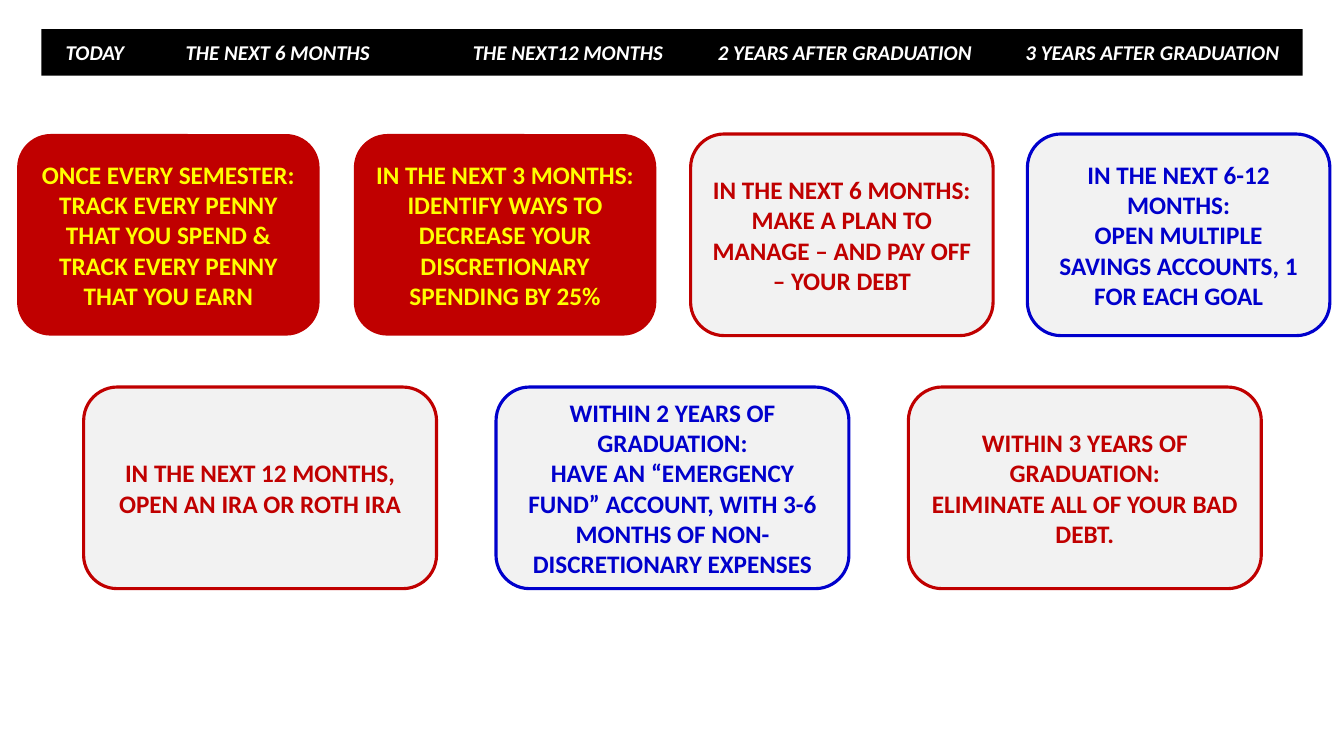
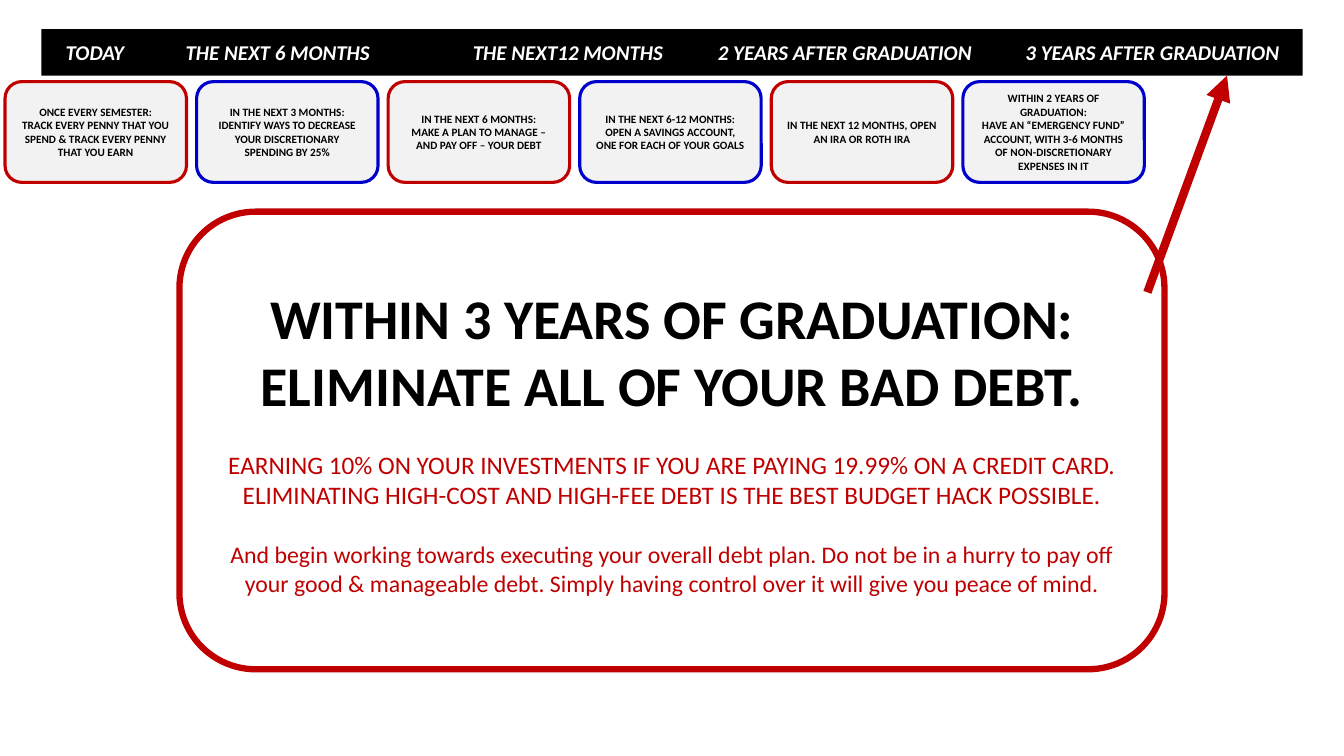
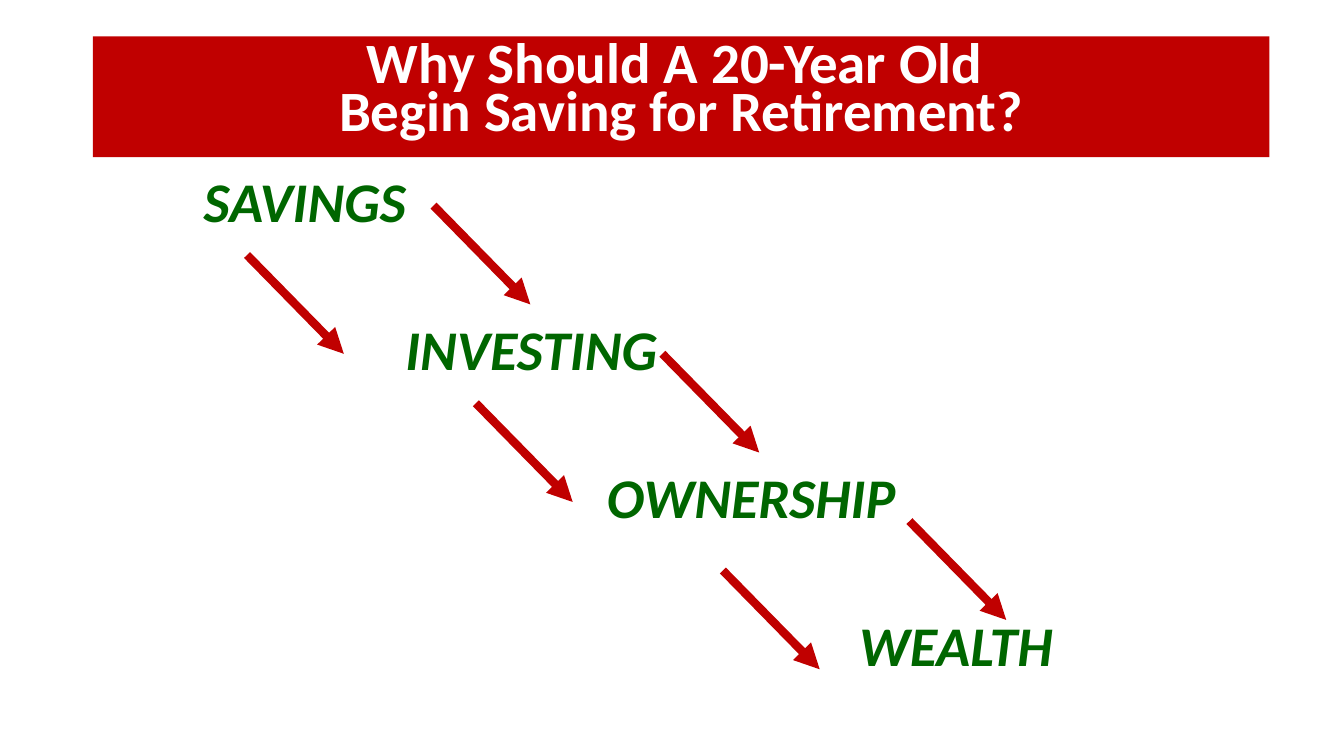
from lxml.etree import SubElement
from pptx import Presentation
from pptx.dml.color import RGBColor
from pptx.enum.shapes import MSO_CONNECTOR, MSO_SHAPE
from pptx.enum.text import MSO_ANCHOR, MSO_AUTO_SIZE, PP_ALIGN
from pptx.oxml.ns import qn
from pptx.util import Inches, Pt

RED = RGBColor(0xC0, 0x00, 0x00)
BLUE = RGBColor(0x00, 0x00, 0xCC)
GREEN = RGBColor(0x00, 0x66, 0x00)
YELLOW = RGBColor(0xFF, 0xFF, 0x00)
GRAY = RGBColor(0xF2, 0xF2, 0xF2)
BLACK = RGBColor(0x00, 0x00, 0x00)
WHITE = RGBColor(0xFF, 0xFF, 0xFF)
FONT = "Calibri"
TITLE_AND_CONTENT, TITLE_ONLY = 1, 5

PERIODS = ["TODAY", "THE NEXT 6 MONTHS", "THE NEXT12 MONTHS",
           "2 YEARS AFTER GRADUATION", "3 YEARS AFTER GRADUATION"]
PERIOD_TABS = [1.19, 4.04, 6.47, 9.52]

TRACK = ["ONCE EVERY SEMESTER:",
         "TRACK EVERY PENNY THAT YOU SPEND & TRACK EVERY PENNY THAT YOU EARN"]
DECREASE = ["IN THE NEXT 3 MONTHS:",
            "IDENTIFY WAYS TO DECREASE YOUR DISCRETIONARY SPENDING BY 25%"]
MANAGE = ["IN THE NEXT 6 MONTHS:",
          "MAKE A PLAN TO MANAGE – AND PAY OFF – YOUR DEBT"]
SAVE = "IN THE NEXT 6-12 MONTHS:"
IRA = ["IN THE NEXT 12 MONTHS, OPEN AN IRA OR ROTH IRA"]
FUND = ["WITHIN 2 YEARS OF GRADUATION:",
        "HAVE AN “EMERGENCY FUND” ACCOUNT, WITH 3-6 MONTHS OF "
        "NON-DISCRETIONARY EXPENSES"]
ELIMINATE = ["WITHIN 3 YEARS OF GRADUATION:", "ELIMINATE ALL OF YOUR BAD DEBT."]


class Deck:
    def __init__(self):
        self.prs = Presentation()
        self.prs.slide_width = Inches(13.33)
        self.prs.slide_height = Inches(7.5)

    def slide(self, layout):
        self.s = self.prs.slides.add_slide(self.prs.slide_layouts[layout])

    def para(self, tf, text, size, color, bold=True, italic=False,
             before=0, spacing=1.0, align=PP_ALIGN.CENTER):
        p = tf.add_paragraph() if tf.text else tf.paragraphs[0]
        p.alignment = align
        p.line_spacing = spacing
        p.space_before = Pt(before)
        for i, line in enumerate(text.split("\n")):
            if i:
                p.add_line_break()
            r = p.add_run()
            r.text = line
            r.font.name = FONT
            r.font.size = Pt(size)
            r.font.bold = bold
            r.font.italic = italic
            r.font.color.rgb = color
        return p

    def place(self, sp, left, top, width, height, anchor):
        sp.left, sp.top = Inches(left), Inches(top)
        sp.width, sp.height = Inches(width), Inches(height)
        tf = sp.text_frame
        tf.word_wrap = True
        tf.auto_size = MSO_AUTO_SIZE.NONE
        tf.vertical_anchor = anchor
        return tf

    def title(self, left, top, width, height, fill, anchor):
        sp = self.s.shapes.title
        sp.fill.solid()
        sp.fill.fore_color.rgb = fill
        return self.place(sp, left, top, width, height, anchor)

    def timeline(self):
        tf = self.title(0.41, 0.29, 12.51, 0.46, BLACK, MSO_ANCHOR.MIDDLE)
        tf.margin_left = Inches(0.24)
        p = self.para(tf, "\t".join(PERIODS), 15, WHITE, italic=True,
                      align=PP_ALIGN.LEFT)
        tabs = SubElement(p._p.get_or_add_pPr(), qn("a:tabLst"))
        for pos in PERIOD_TABS:
            SubElement(tabs, qn("a:tab"), pos=str(Inches(pos)), algn="l")

    def box(self, left, top, width, height, fill=None, line=None, weight=2.25):
        sp = self.s.shapes.add_shape(
            MSO_SHAPE.ROUNDED_RECTANGLE, Inches(left), Inches(top),
            Inches(width), Inches(height))
        sp.shadow.inherit = False
        if fill is None:
            sp.fill.background()
        else:
            sp.fill.solid()
            sp.fill.fore_color.rgb = fill
        if line is None:
            sp.line.fill.background()
        else:
            sp.line.color.rgb = line
            sp.line.width = Pt(weight)
        sp.text_frame.word_wrap = True
        sp.text_frame.vertical_anchor = MSO_ANCHOR.MIDDLE
        return sp.text_frame

    def row(self, cards, left, top, step, width, height, size):
        for i, (lines, fill, line, color) in enumerate(cards):
            tf = self.box(left + i * step, top, width, height, fill, line)
            for text in lines:
                self.para(tf, text, size, color)

    def arrow(self, x1, y1, x2, y2):
        c = self.s.shapes.add_connector(
            MSO_CONNECTOR.STRAIGHT, Inches(x1), Inches(y1), Inches(x2), Inches(y2))
        c.line.color.rgb = RED
        c.line.width = Pt(6)
        SubElement(c.line._get_or_add_ln(), qn("a:tailEnd"), type="triangle")
        SubElement(c._element.spPr, qn("a:effectLst"))

    def stairs(self, steps):
        tf = self.place(self.s.placeholders[1], 0.92, 1.68, 11.5, 5.08,
                        MSO_ANCHOR.TOP)
        for i, (word, indent) in enumerate(steps):
            p = self.para(tf, word, 40, GREEN, italic=True, spacing=0.9,
                          before=62.5 if i else 0, align=PP_ALIGN.LEFT)
            pPr = p._p.get_or_add_pPr()
            pPr.set("marL", str(Inches(indent)))
            pPr.set("indent", "0")
            SubElement(pPr, qn("a:buNone"))


def goals(deck):
    deck.slide(TITLE_ONLY)
    deck.timeline()
    accounts = [SAVE, "OPEN MULTIPLE SAVINGS ACCOUNTS, 1 FOR EACH GOAL"]
    deck.row([(TRACK, RED, None, YELLOW), (DECREASE, RED, None, YELLOW),
              (MANAGE, GRAY, RED, RED), (accounts, GRAY, BLUE, BLUE)],
             0.17, 1.33, 3.34, 3, 2, 18)
    deck.row([(IRA, GRAY, RED, RED), (FUND, GRAY, BLUE, BLUE),
              (ELIMINATE, GRAY, RED, RED)], 0.83, 3.84, 4.09, 3.5, 2, 18)


def bad_debt(deck):
    deck.slide(TITLE_ONLY)
    deck.timeline()
    accounts = [SAVE, "OPEN A SAVINGS ACCOUNT, ONE FOR EACH OF YOUR GOALS"]
    fund = [FUND[0], FUND[1] + " IN IT"]
    cards = [(lines, GRAY, (RED, BLUE)[i % 2], BLACK) for i, lines in
             enumerate([TRACK, DECREASE, MANAGE, accounts, IRA, fund])]
    deck.row(cards, 0.05, 0.81, 1.9, 1.8, 1, 8)
    deck.arrow(11.38, 2.9, 12.17, 0.75)
    tf = deck.box(1.78, 2.1, 9.77, 4.54, line=RED, weight=4.5)
    for text in ELIMINATE:
        deck.para(tf, text, 40, BLACK)
    deck.para(tf, "EARNING 10% ON YOUR INVESTMENTS IF YOU ARE PAYING 19.99% ON A "
              "CREDIT CARD. ELIMINATING HIGH-COST AND HIGH-FEE DEBT IS THE BEST "
              "BUDGET HACK POSSIBLE.", 18, RED, bold=False, before=22)
    deck.para(tf, "And begin working towards executing your overall debt plan. "
              "Do not be in a hurry to pay off your good & manageable debt. "
              "Simply having control over it will give you peace of mind.",
              17, RED, bold=False, before=22)


def retirement(deck):
    deck.slide(TITLE_AND_CONTENT)
    tf = deck.title(0.92, 0.36, 11.67, 1.2, RED, MSO_ANCHOR.TOP)
    tf.margin_top = Inches(0.09)
    deck.para(tf, "Why Should A 20-Year Old \nBegin Saving for Retirement?",
              40.7, WHITE, spacing=0.7)
    deck.stairs([("SAVINGS", 1), ("INVESTING", 3), ("OWNERSHIP", 5),
                 ("WEALTH", 7.5)])
    for x, y in [(2.45, 2.53), (4.72, 4), (7.17, 5.66)]:
        for dx, dy in [(0, 0), (1.85, -0.49)]:
            deck.arrow(x + dx, y + dy, x + dx + 0.96, y + dy + 0.98)


def main():
    deck = Deck()
    goals(deck)
    bad_debt(deck)
    retirement(deck)
    deck.prs.save("out.pptx")


if __name__ == "__main__":
    main()
